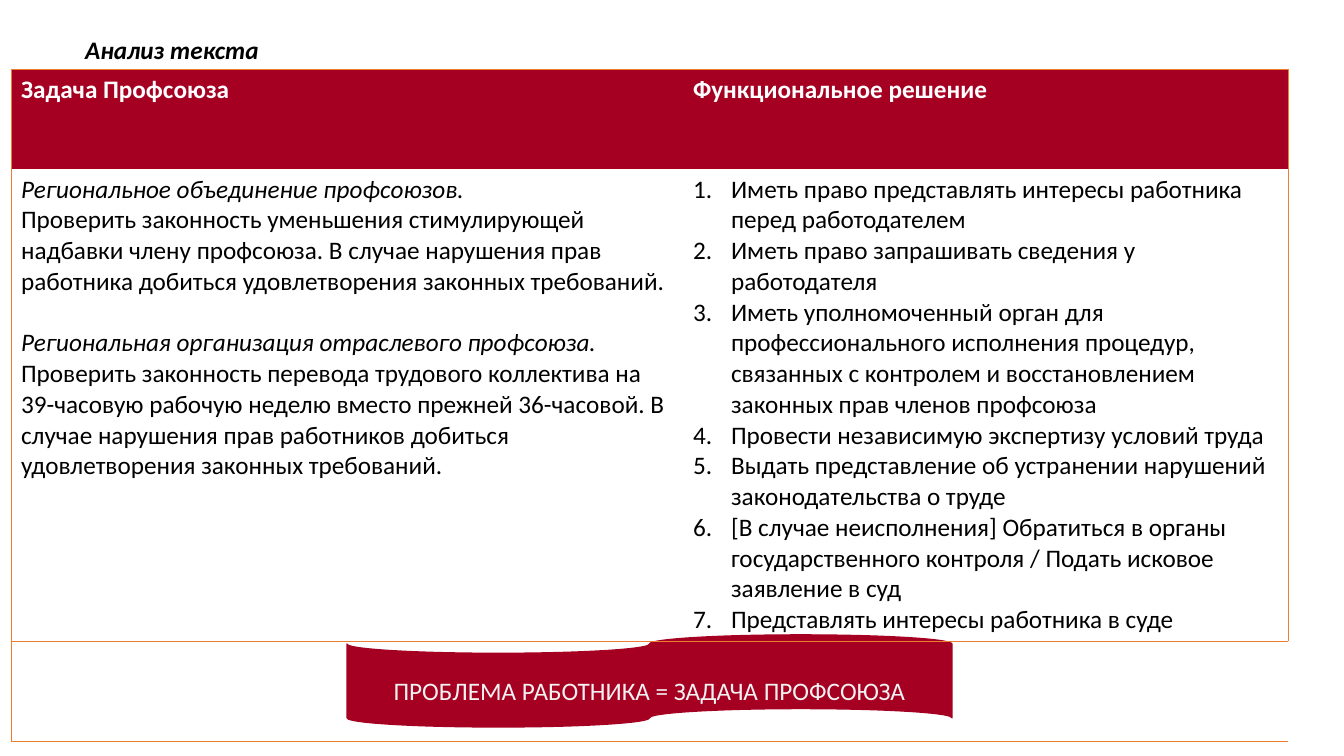
"""Builds the slide that compares trade union tasks with functional solutions."""
import dataclasses

import lxml.etree
import pptx
import pptx.dml.color
import pptx.enum.shapes
import pptx.enum.text
import pptx.oxml.ns
import pptx.util


@dataclasses.dataclass(frozen=True)
class Theme:
    font: str = "Calibri"
    size: int = 18
    border_width: float = 0.5
    crimson: str = "A50021"
    border: str = "ED7D31"
    black: str = "000000"
    white: str = "FFFFFF"
    pale: str = "F2F2F2"


THEME = Theme()
PX = 914400 / 100.8
RGB = pptx.dml.color.RGBColor.from_string
QN = pptx.oxml.ns.qn


def px(*lengths):
    return [pptx.util.Emu(round(n * PX)) for n in lengths]


def write(p, text, color, bold=False, italic=False):
    p.text = text
    p.font.name = THEME.font
    p.font.size = pptx.util.Pt(THEME.size)
    p.font.color.rgb = RGB(color)
    p.font.bold = bold
    p.font.italic = italic


headers = ["Задача Профсоюза", "Функциональное решение"]
tasks = [
    ("Региональное объединение профсоюзов.",
     "Проверить законность уменьшения стимулирующей надбавки члену профсоюза. "
     "В случае нарушения прав работника добиться удовлетворения законных требований."),
    ("Региональная организация отраслевого профсоюза.",
     "Проверить законность перевода трудового коллектива на 39-часовую рабочую неделю "
     "вместо прежней 36-часовой. В случае нарушения прав работников добиться "
     "удовлетворения законных требований."),
]
solutions = [
    "Иметь право представлять интересы работника перед работодателем",
    "Иметь право запрашивать сведения у работодателя",
    "Иметь уполномоченный орган для профессионального исполнения процедур, "
    "связанных с контролем и восстановлением законных прав членов профсоюза",
    "Провести независимую экспертизу условий труда",
    "Выдать представление об устранении нарушений законодательства о труде",
    "[В случае неисполнения] Обратиться в органы государственного контроля / "
    "Подать исковое заявление в суд",
    "Представлять интересы работника в суде",
]

prs = pptx.Presentation()
prs.slide_width, prs.slide_height = px(1344, 756)
s = prs.slides.add_slide(prs.slide_layouts[5])

title = s.shapes.title
title.left, title.top, title.width, title.height = px(75, 29, 211, 40)
tf = title.text_frame
tf.word_wrap = False
tf.auto_size = pptx.enum.text.MSO_AUTO_SIZE.SHAPE_TO_FIT_TEXT
p = tf.paragraphs[0]
write(p, "Анализ текста", THEME.black, bold=True, italic=True)
p.alignment = pptx.enum.text.PP_ALIGN.LEFT

tape = s.shapes.add_shape(
    pptx.enum.shapes.MSO_SHAPE.FLOWCHART_PUNCHED_TAPE, *px(347, 635, 605, 92))
tape.shadow.inherit = False
tape.fill.solid()
tape.fill.fore_color.rgb = RGB(THEME.crimson)
tape.line.color.rgb = RGB(THEME.crimson)
tape.line.width = pptx.util.Pt(1)

table = s.shapes.add_table(3, 2, *px(11, 69, 1277, 672)).table
table.first_row = False
table.horz_banding = False
for column, width in zip(table.columns, px(672, 605)):
    column.width = width
for row, height in zip(table.rows, px(100, 472, 100)):
    row.height = height

for r in range(3):
    for c in range(2):
        cell = table.cell(r, c)
        tcPr = cell._tc.get_or_add_tcPr()
        visible = {"lnL": c == 0, "lnR": c == 1, "lnT": r != 1, "lnB": r > 0}
        visible["lnT"] = r in (0, 2)
        for side, shown in visible.items():
            ln = lxml.etree.SubElement(tcPr, QN(f"a:{side}"))
            ln.set("w", str(pptx.util.Pt(THEME.border_width)))
            if shown:
                fill = lxml.etree.SubElement(ln, QN("a:solidFill"))
                lxml.etree.SubElement(fill, QN("a:srgbClr")).set("val", THEME.border)
            else:
                lxml.etree.SubElement(ln, QN("a:noFill"))
        if r == 0:
            cell.fill.solid()
            cell.fill.fore_color.rgb = RGB(THEME.crimson)
            write(cell.text_frame.paragraphs[0], headers[c], THEME.white, bold=True)
        else:
            cell.fill.background()

tf = table.cell(1, 0).text_frame
for i, (union, task) in enumerate(tasks):
    p = tf.add_paragraph() if i else tf.paragraphs[0]
    write(p, union, THEME.black, italic=True)
    if i:
        p.space_before = pptx.util.Pt(22)
    write(tf.add_paragraph(), task, THEME.black)

tf = table.cell(1, 1).text_frame
for i, solution in enumerate(solutions):
    p = tf.add_paragraph() if i else tf.paragraphs[0]
    write(p, solution, THEME.black)
    pPr = p._p.get_or_add_pPr()
    indent = px(38)[0]
    pPr.set("marL", str(indent))
    pPr.set("indent", str(-indent))
    bullet = lxml.etree.Element(QN("a:buAutoNum"), type="arabicPeriod")
    pPr.insert(0, bullet)

summary = table.cell(2, 0)
summary.merge(table.cell(2, 1))
summary.margin_top = px(36)[0]
p = summary.text_frame.paragraphs[0]
write(p, "ПРОБЛЕМА РАБОТНИКА = ЗАДАЧА ПРОФСОЮЗА", THEME.pale)
p.alignment = pptx.enum.text.PP_ALIGN.CENTER

prs.save("out.pptx")
